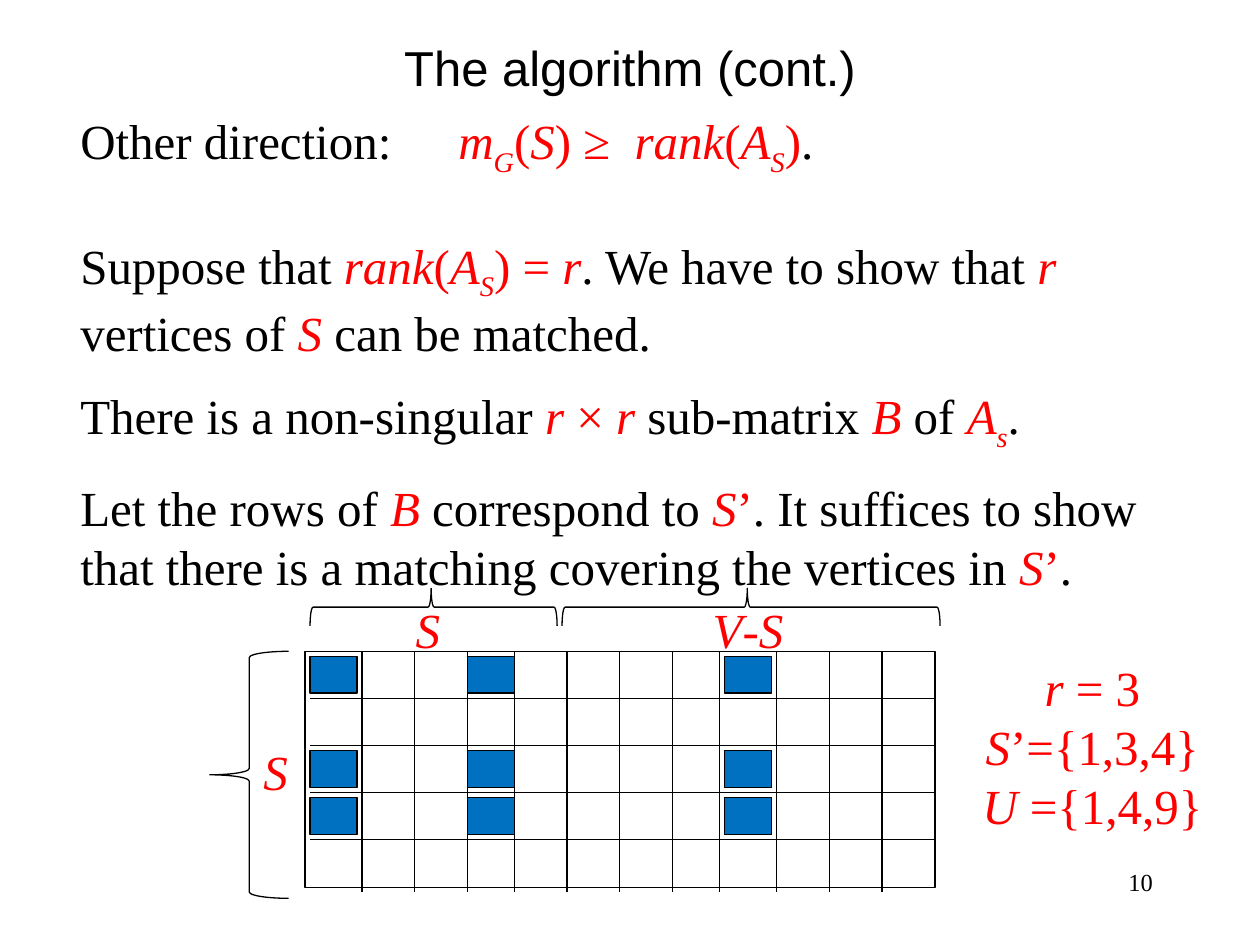
from lxml import etree
from pptx import Presentation
from pptx import util as u
from pptx.dml.color import RGBColor
from pptx.enum import shapes, text
from pptx.oxml import ns

BLACK = RGBColor(0x00, 0x00, 0x00)
RED = RGBColor(0xFF, 0x00, 0x00)
BLUE = RGBColor(0x00, 0x70, 0xC0)
LEFT, CENTER, RIGHT = text.PP_ALIGN.LEFT, text.PP_ALIGN.CENTER, text.PP_ALIGN.RIGHT

# Run styles: plain, red, variable (red italic), subscript of a variable
STYLES = {
    "plain": (BLACK, {"italic": False}),
    "red": (RED, {"italic": False}),
    "var": (RED, {"italic": True}),
    "sub": (RED, {"italic": True}),
}

presentation = Presentation()
presentation.slide_width, presentation.slide_height = u.Cm(25.4), u.Cm(19.05)
slide = presentation.slides.add_slide(presentation.slide_layouts[6])


def add_text(box, paragraphs, align=CENTER, size=28, font="Times New Roman"):
    """Each paragraph is (space before in points, [(style, wording), ...])."""
    frame = slide.shapes.add_textbox(*map(u.Cm, box)).text_frame
    frame.word_wrap = True
    for index, (space, runs) in enumerate(paragraphs):
        paragraph = frame.add_paragraph() if index else frame.paragraphs[0]
        paragraph.alignment = align
        paragraph.space_before = u.Pt(space)
        for style, wording in runs:
            run = paragraph.add_run()
            run.text = wording
            color, values = STYLES[style]
            for name, value in {"size": u.Pt(size), "name": font, **values}.items():
                setattr(run.font, name, value)
            run.font.color.rgb = color
            if style == "sub":
                run._r.get_or_add_rPr().set("baseline", "-25000")


def add_outline(kind, box, fill=None, values=None):
    shape = slide.shapes.add_shape(kind, *map(u.Cm, box))
    shape.shadow.inherit = False
    if fill is None:
        shape.fill.background()
    else:
        shape.fill.solid()
        shape.fill.fore_color.rgb = fill
    shape.line.color.rgb = BLACK
    shape.line.width = u.Pt(0.75)
    for name, value in (values or {}).items():
        setattr(shape, name, value)
    return shape


# Slide number and title
add_text((18.21, 17.35, 5.28, 1.27), [(0, [("plain", "10")])], RIGHT, 14)
add_text((1.17, 0.64, 23.06, 1.45), [(0, [("plain", "The algorithm (cont.)")])], font="Arial")

# Argument
rank = [("var", "rank"), ("red", "("), ("var", "A"), ("sub", "S")]
add_text((1.37, 2.11, 22.12, 9.83), [
    (0, [("plain", "Other direction: \t"), ("var", "m"), ("sub", "G"), ("red", "("),
         ("var", "S"), ("red", ") ≥  "), *rank, ("red", ")"), ("plain", ".")]),
    (33, [("plain", "Suppose that "), *rank, ("red", ") = "), ("var", "r"),
          ("plain", ". We have to show that "), ("var", "r"), ("plain", " vertices of "),
          ("var", "S"), ("plain", " can be matched.")]),
    (14, [("plain", "There is a non-singular "), ("var", "r "), ("red", "× "), ("var", "r"),
          ("plain", " sub-matrix "), ("var", "B"), ("plain", " of "), ("var", "A"),
          ("sub", "s"), ("plain", ".")]),
    (14, [("plain", "Let the rows of "), ("var", "B"), ("plain", " correspond to "),
          ("var", "S"), ("red", "’"),
          ("plain", ". It suffices to show that there is a matching covering the vertices in "),
          ("var", "S"), ("red", "’"), ("plain", ".")]),
], LEFT)

# Matrix frame and grid lines
row_height = 0.95
add_outline(shapes.MSO_SHAPE.RECTANGLE, (6.15, 13.13, 12.7, 4.76))
row_lines = [(6.25, 14.08 + row_height * row, 18.85, 14.08 + row_height * row)
             for row in range(4)]
column_lines = [(x, 13.13, x, 17.99) for x in
                (7.3, 8.36, 9.42, 10.37, 11.43, 12.49, 13.55, 14.5, 15.66, 16.72, 17.78)]
for ends in row_lines + column_lines:
    line = slide.shapes.add_connector(shapes.MSO_CONNECTOR.STRAIGHT, *map(u.Cm, ends))
    line.line.color.rgb = BLACK
    line.line.width = u.Pt(0.75)
    etree.SubElement(line._element.spPr, ns.qn("a:effectLst"))

# Entries of the sub-matrix B: rows 1, 3, 4 and columns 1, 4, 9
for row in (1, 3, 4):
    for x in (6.25, 9.42, 14.6):
        add_outline(shapes.MSO_SHAPE.RECTANGLE,
                    (x, 13.23 + row_height * (row - 1), 0.95, 0.74), BLUE)

# Braces: rows S, columns S, columns V-S
for box, rotation, middle in (
    ((4.23, 13.13, 1.59, 4.98), 0, 0.5),
    ((8.36, 9.75, 0.76, 4.98), 90, 0.51),
    ((14.76, 8.43, 0.76, 7.62), 90, 0.51),
):
    brace = add_outline(shapes.MSO_SHAPE.LEFT_BRACE, box, values={"rotation": rotation})
    brace.adjustments[0] = 0.08
    brace.adjustments[1] = middle

# Brace labels
add_text((4.76, 14.82, 1.59, 1.45), [(0, [("var", "S")])])
add_text((7.83, 11.96, 1.59, 1.45), [(0, [("var", "S")])])
add_text((13.65, 11.96, 2.86, 1.45), [(0, [("var", "V"), ("red", "-"), ("var", "S")])])

# Example values
add_text((19.16, 13.13, 5.72, 3.84), [
    (0, [("var", "r "), ("red", "= 3")]),
    (0, [("var", "S"), ("red", "’={1,3,4}")]),
    (0, [("var", "U"), ("red", " ={1,4,9}")]),
])

presentation.save("out.pptx")
